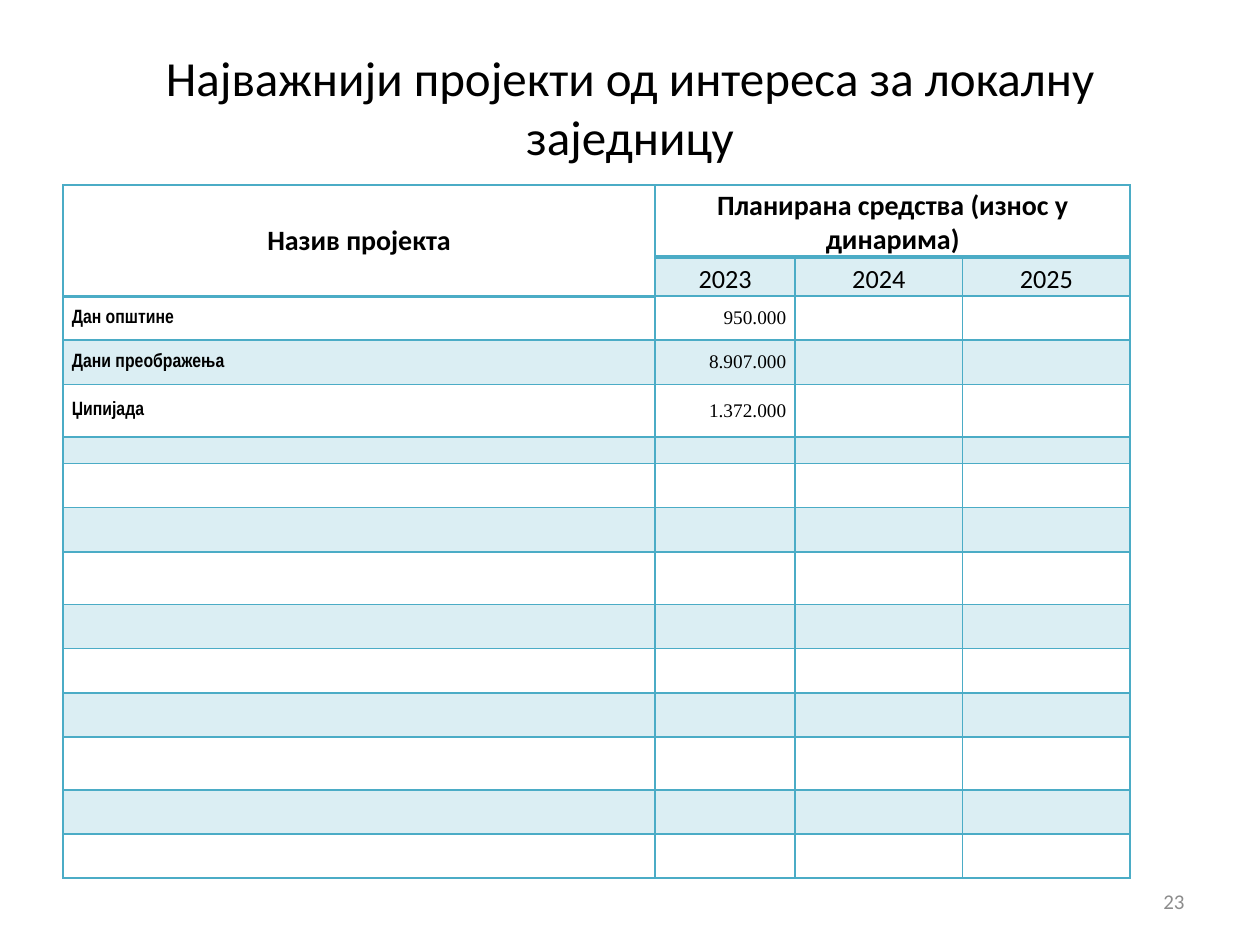
import pptx
import pptx.dml.color
import pptx.enum.text
import pptx.oxml
import pptx.oxml.ns
import pptx.util

WIDTH, HEIGHT = 10, 7.5
COLORS = {"text": "000000", "number": "8C8C8C", "accent": "4BACC6"}
BAND_OPACITY = 20  # percent
ALIGN = pptx.enum.text.PP_ALIGN
ANCHOR = pptx.enum.text.MSO_ANCHOR

COLUMN_WIDTHS = [4.7, 1.11, 1.33, 1.33]
SHORT, TALL = 0.35, 0.42
ROW_HEIGHTS = [0.57, 0.31, SHORT, SHORT, TALL, 0.21, SHORT, SHORT, TALL,
               SHORT, SHORT, SHORT, TALL, SHORT, SHORT]
YEARS = ["2023", "2024", "2025"]
PROJECTS = [("Дан општине", "950.000"),
            ("Дани преображења", "8.907.000"),
            ("Џипијада", "1.372.000")]


def rgb(name):
    return pptx.dml.color.RGBColor.from_string(COLORS[name])


def write(paragraph, text, size, font="Calibri", bold=False,
          align=ALIGN.CENTER, color="text"):
    paragraph.text = text
    paragraph.alignment = align
    paragraph.font.size = pptx.util.Pt(size)
    paragraph.font.name = font
    paragraph.font.bold = bold
    paragraph.font.color.rgb = rgb(color)


def add_text(slide, box, text, size, **style):
    """Place a text box given as shares of the slide's size."""
    left, top, width, height = box
    shape = slide.shapes.add_textbox(
        pptx.util.Inches(left * WIDTH), pptx.util.Inches(top * HEIGHT),
        pptx.util.Inches(width * WIDTH), pptx.util.Inches(height * HEIGHT))
    shape.text_frame.word_wrap = True
    shape.text_frame.vertical_anchor = ANCHOR.MIDDLE
    write(shape.text_frame.paragraphs[0], text, size, **style)


def set_borders(cell, top, bottom):
    properties = cell._tc.get_or_add_tcPr()
    for side, points in (("L", 1), ("R", 1), ("T", top), ("B", bottom)):
        properties.append(pptx.oxml.parse_xml(
            f'<a:ln{side} {pptx.oxml.ns.nsdecls("a")} w="{pptx.util.Pt(points)}">'
            f'<a:solidFill><a:srgbClr val="{COLORS["accent"]}"/></a:solidFill>'
            f'</a:ln{side}>'))


def set_fill(cell, banded):
    if not banded:
        cell.fill.background()
        return
    cell.fill.solid()
    cell.fill.fore_color.rgb = rgb("accent")
    color = cell._tc.tcPr.find(".//" + pptx.oxml.ns.qn("a:solidFill") + "[last()]")
    color = cell._tc.tcPr.findall(pptx.oxml.ns.qn("a:solidFill"))[0][0]
    color.append(pptx.oxml.parse_xml(
        f'<a:alpha {pptx.oxml.ns.nsdecls("a")} val="{BAND_OPACITY * 1000}"/>'))


def format_cell(cell, row, column):
    cell.margin_left = cell.margin_right = pptx.util.Inches(0.07)
    cell.margin_top = cell.margin_bottom = 0
    cell.vertical_anchor = ANCHOR.MIDDLE
    # A heavier rule closes each header cell above the years and the projects
    header_rows = 2 if column == 0 else 1
    set_borders(cell, top=2 if row == header_rows else 1,
                bottom=2 if row == header_rows - 1 else 1)
    set_fill(cell, row % 2 == 1 and (row, column) != (1, 0))
    # Small line height keeps empty rows at their set height
    cell.text_frame.paragraphs[0]._p.append(pptx.oxml.parse_xml(
        f'<a:endParaRPr {pptx.oxml.ns.nsdecls("a")} sz="1100"/>'))


def write_cell(cell, text, size, anchor=ANCHOR.MIDDLE, **style):
    cell.vertical_anchor = anchor
    write(cell.text_frame.paragraphs[0], text, size, **style)


def add_project_table(slide):
    frame = slide.shapes.add_table(
        len(ROW_HEIGHTS), len(COLUMN_WIDTHS),
        pptx.util.Inches(0.05 * WIDTH), pptx.util.Inches(0.196 * HEIGHT),
        pptx.util.Inches(sum(COLUMN_WIDTHS)), pptx.util.Inches(sum(ROW_HEIGHTS)))
    table = frame.table
    table.first_row = table.horz_banding = False
    for column, width in zip(table.columns, COLUMN_WIDTHS):
        column.width = pptx.util.Inches(width)
    for row, height in zip(table.rows, ROW_HEIGHTS):
        row.height = pptx.util.Inches(height)
    for row in range(len(ROW_HEIGHTS)):
        for column in range(len(COLUMN_WIDTHS)):
            format_cell(table.cell(row, column), row, column)

    # Header
    table.cell(0, 0).merge(table.cell(1, 0))
    table.cell(0, 1).merge(table.cell(0, 3))
    write_cell(table.cell(0, 0), "Назив пројекта", 16, bold=True)
    write_cell(table.cell(0, 1), "Планирана средства (износ у динарима)", 16,
               ANCHOR.BOTTOM, bold=True)
    for column, year in enumerate(YEARS, start=1):
        write_cell(table.cell(1, column), year, 15, ANCHOR.BOTTOM)

    # Projects
    for row, (name, amount) in enumerate(PROJECTS, start=2):
        write_cell(table.cell(row, 0), name, 11, font="Arial Narrow", bold=True,
                   align=ALIGN.LEFT)
        write_cell(table.cell(row, 1), amount, 11, font="Times New Roman",
                   align=ALIGN.RIGHT)


def main():
    presentation = pptx.Presentation()
    presentation.slide_width = pptx.util.Inches(WIDTH)
    presentation.slide_height = pptx.util.Inches(HEIGHT)
    slide = presentation.slides.add_slide(presentation.slide_layouts[6])

    # Title
    add_text(slide, (0.05, 0.04, 0.9, 0.145),
             "Најважнији пројекти од интереса за локалну заједницу", 28)
    # Slide number
    add_text(slide, (0.717, 0.927, 0.233, 0.053), "23", 12,
             align=ALIGN.RIGHT, color="number")
    add_project_table(slide)
    presentation.save("out.pptx")


if __name__ == "__main__":
    main()
